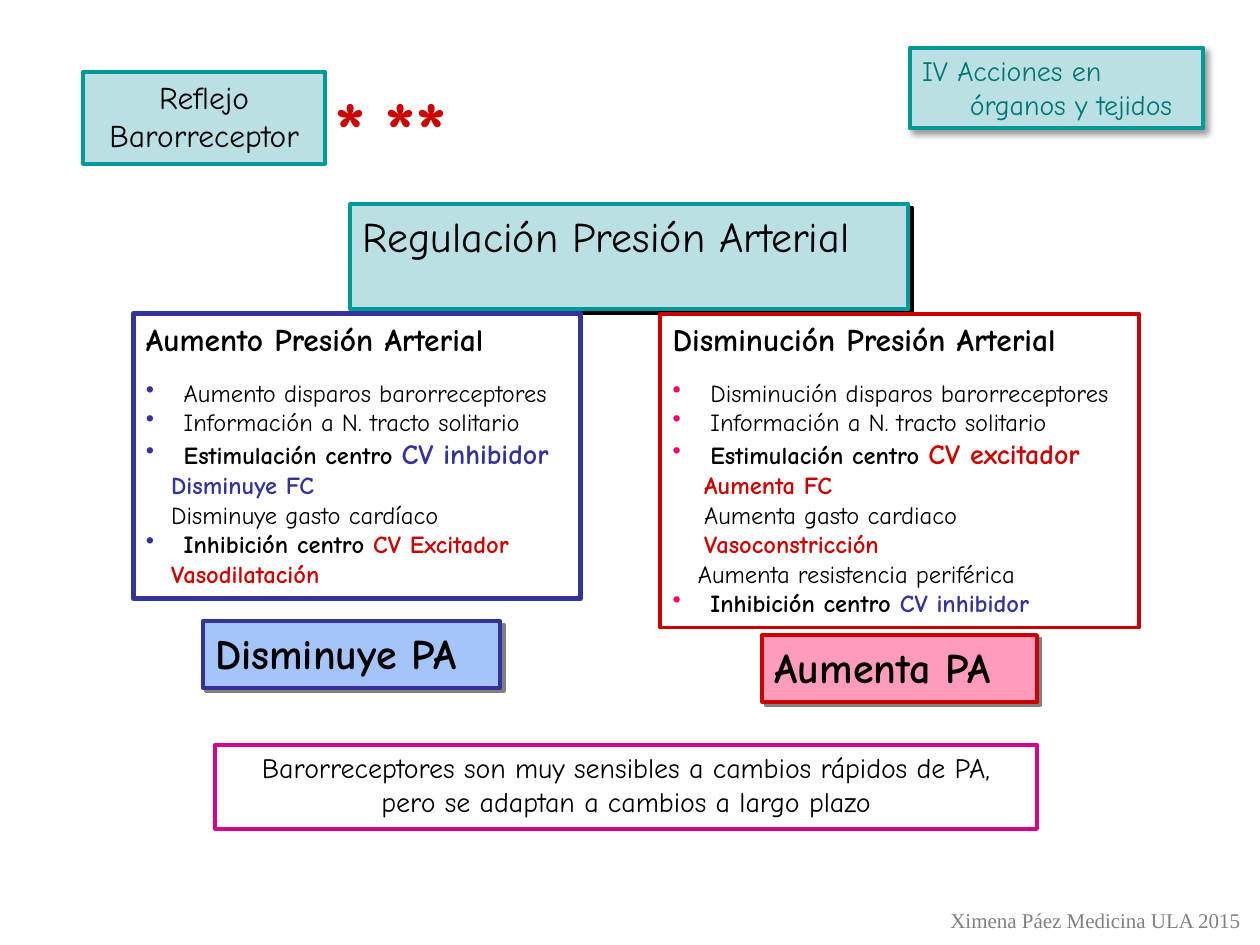
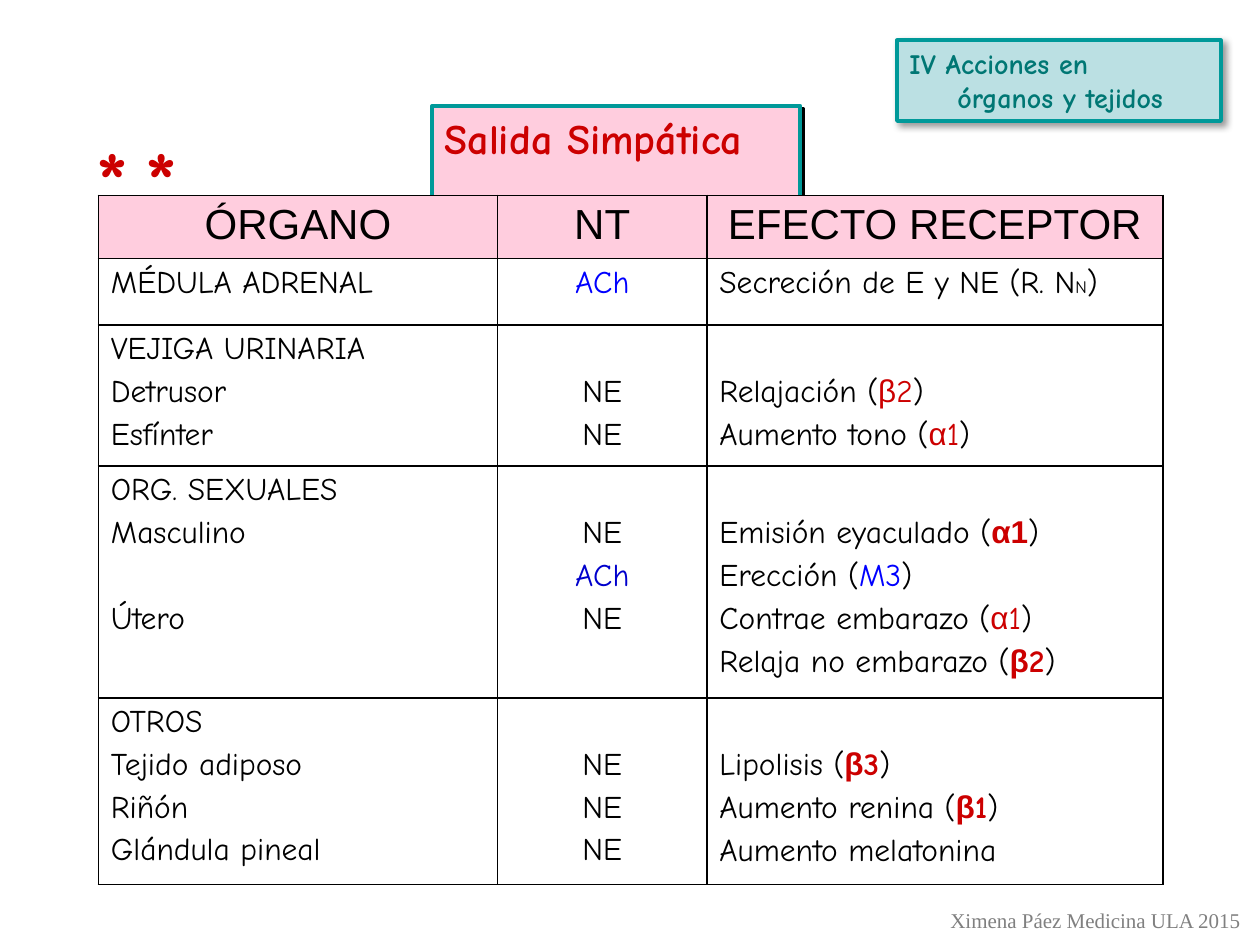
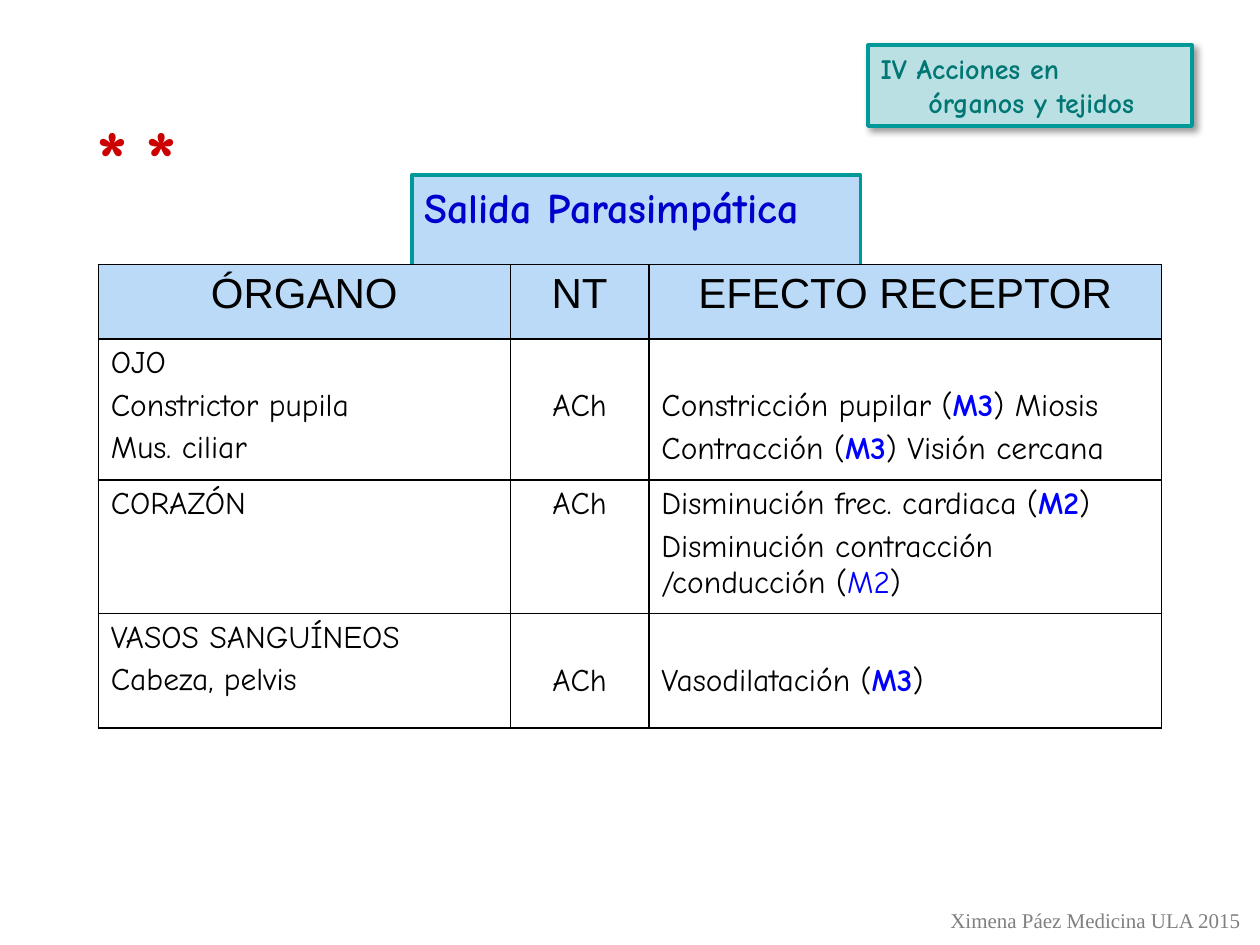
from dataclasses import dataclass

from lxml import etree
from pptx import Presentation
from pptx.dml.color import RGBColor
from pptx.enum.shapes import MSO_SHAPE as SHAPE
from pptx.enum.text import MSO_ANCHOR as ANCHOR, MSO_AUTO_SIZE as AUTO, PP_ALIGN as ALIGN
from pptx.oxml import parse_xml
from pptx.oxml.ns import nsdecls, qn
from pptx.util import Inches, Pt


@dataclass(frozen=True)
class Theme:
    font: str = "Comic Neue"
    symbol_font: str = "Arial"
    footer_font: str = "Times New Roman"
    black: str = "000000"
    white: str = "FFFFFF"
    gray: str = "808080"
    teal: str = "009999"
    teal_text: str = "007774"
    teal_fill: str = "BBE0E3"
    red: str = "CC0000"
    pink_fill: str = "FFCDDE"
    rose_fill: str = "FF9BBC"
    pink: str = "FF0066"
    magenta: str = "D60093"
    indigo: str = "333399"
    blue: str = "0000FF"
    deep_blue: str = "0000CC"
    sky_fill: str = "BBDAF7"
    blue_fill: str = "A5C5F9"
    star: int = 48
    title: int = 24
    body: int = 18
    note: int = 16
    item: int = 14
    footer: int = 12
    subscript: int = 10


T = Theme()


@dataclass
class Run:
    """Text whose unset properties come from its box."""
    text: str
    color: str = None
    bold: bool = None
    size: int = None
    font: str = None


@dataclass
class Para:
    runs: list
    bullet: str = None
    indent: float = 0
    before: float = 0


HARD_SHADOW = (100, 0, 2.8)
SOFT_SHADOW = (40, 4, 3)
LINE_PITCH = 0.34
CELL_GAP = 3.6


def shadow_xml(color, alpha, blur, dist):
    return parse_xml(
        f'<a:effectLst {nsdecls("a")}><a:outerShdw blurRad="{Pt(blur)}" dist="{Pt(dist)}" '
        f'dir="2700000" algn="ctr" rotWithShape="0"><a:srgbClr val="{color}">'
        f'<a:alpha val="{alpha * 1000}"/></a:srgbClr></a:outerShdw></a:effectLst>')


def as_para(value):
    if isinstance(value, Para):
        return value
    return Para(value if isinstance(value, list) else [Run(value)])


def item(text, bullet, before=0):
    return Para([Run(text)], bullet, 0.3, before)


def detail(text, color=None, indent=0.2):
    return Para([Run(text, color, bool(color))], indent=indent)


def center_item(action, name, color, bullet, size=None):
    """Bulleted line that names a cardiovascular centre."""
    runs = [Run(action + " centro ", bold=True), Run(name, color, True, size)]
    return Para(runs, bullet, 0.3)


def receptor(effect, name, bold=False, tail=")", symbols=1):
    """Effect followed by its receptor; Greek letters use the symbol font."""
    if name[0] == "M":
        marks = [Run(name, T.blue, bold)]
    else:
        marks = [Run(name[:symbols], T.red, bold, font=T.symbol_font)]
        if name[symbols:]:
            marks.append(Run(name[symbols:], T.red, bold))
    return [Run(effect + " ("), *marks, Run(tail)]


class Deck:
    def __init__(self, theme):
        self.theme = theme
        self.prs = Presentation()
        self.prs.slide_width, self.prs.slide_height = Inches(10), Inches(7.5)
        self.slide = None

    def new_slide(self):
        self.slide = self.prs.slides.add_slide(self.prs.slide_layouts[5])

    def set_paras(self, tf, paras, color=None, size=None, bold=False, font=None,
                  align=ALIGN.LEFT, gap=0):
        t = self.theme
        for i, para in enumerate(map(as_para, paras)):
            p = tf.paragraphs[0] if i == 0 else tf.add_paragraph()
            p.alignment = align
            p.space_before = Pt(para.before + gap if i else 0)
            self.indent(p, para)
            for run in para.runs:
                r = p.add_run()
                r.text = run.text
                f = r.font
                f.name = run.font or font or t.font
                f.size = Pt(run.size or size or t.body)
                f.bold = bold if run.bold is None else run.bold
                f.color.rgb = RGBColor.from_string(run.color or color or t.black)

    def indent(self, p, para):
        if not para.indent:
            return
        pPr = p._p.get_or_add_pPr()
        pPr.set("marL", str(Inches(para.indent)))
        if para.bullet:
            pPr.set("indent", str(-Inches(para.indent)))
            bu_color = etree.SubElement(pPr, qn("a:buClr"))
            etree.SubElement(bu_color, qn("a:srgbClr"), val=para.bullet)
            etree.SubElement(pPr, qn("a:buChar"), char="•")

    def frame(self, sp, paras, **style):
        tf = sp.text_frame
        tf.word_wrap = False
        tf.auto_size = AUTO.SHAPE_TO_FIT_TEXT
        tf.vertical_anchor = ANCHOR.TOP
        tf.margin_left = tf.margin_right = Inches(0.1)
        tf.margin_top = tf.margin_bottom = Inches(0.05)
        self.set_paras(tf, paras, **style)

    def paint(self, sp, fill, line, width=2.25, shadow=None, shadow_color=None):
        if fill:
            sp.fill.solid()
            sp.fill.fore_color.rgb = RGBColor.from_string(fill)
        else:
            sp.fill.background()
        sp.line.color.rgb = RGBColor.from_string(line)
        sp.line.width = Pt(width)
        if shadow:
            sp._element.spPr.append(shadow_xml(shadow_color or self.theme.black, *shadow))

    def box(self, at, paras, line, fill=None, width=2.25, shadow=None,
            shadow_color=None, **style):
        sp = self.slide.shapes.add_shape(SHAPE.RECTANGLE, *map(Inches, at))
        if not shadow:
            sp.shadow.inherit = False
        self.paint(sp, fill, line, width, shadow, shadow_color)
        self.frame(sp, paras, **style)

    def title(self, at, text, fill, color=None, bold=True, shadow=None):
        sp = self.slide.shapes.title
        sp.left, sp.top, sp.width, sp.height = map(Inches, at)
        self.paint(sp, fill, self.theme.teal, shadow=shadow)
        self.frame(sp, [text], color=color, size=self.theme.title, bold=bold)

    def text(self, at, text, **style):
        sp = self.slide.shapes.add_textbox(*map(Inches, at))
        self.frame(sp, [text], **style)
        return sp

    def stars(self, left, top, text="*", width=0.55):
        sp = self.text((left, top, width, 0.9), text, color=self.theme.red,
                       size=self.theme.star, bold=True)
        rPr = sp.text_frame.paragraphs[0].runs[0]._r.get_or_add_rPr()
        rPr.find(qn("a:solidFill")).addnext(shadow_xml(self.theme.black, *HARD_SHADOW))

    def section_tag(self, left, top, width, bold=True):
        t = self.theme
        self.box((left, top, width, 0.64),
                 ["IV Acciones en", Para([Run("órganos y tejidos")], indent=0.38)],
                 t.teal, t.teal_fill, shadow=SOFT_SHADOW,
                 color=t.teal_text, size=t.note, bold=bold)

    def footer(self):
        t = self.theme
        self.text((7.43, 7.15, 2.53, 0.3), "Ximena Páez Medicina ULA 2015", color=t.gray,
                  size=t.footer, font=t.footer_font, align=ALIGN.CENTER)

    def cell(self, cell, paras, fill, skip=0, **style):
        """Fill a cell, starting its text skip lines below the top."""
        tcPr = cell._tc.get_or_add_tcPr()
        for side in "LRTB":
            tcPr.append(parse_xml(
                f'<a:ln{side} {nsdecls("a")} w="{Pt(1)}"><a:solidFill>'
                f'<a:srgbClr val="{self.theme.black}"/></a:solidFill></a:ln{side}>'))
        cell.fill.solid()
        cell.fill.fore_color.rgb = RGBColor.from_string(fill)
        cell.margin_left = cell.margin_right = Inches(0.1)
        cell.margin_top = Inches(0.05 + skip * LINE_PITCH)
        cell.margin_bottom = Inches(0.05)
        self.set_paras(cell.text_frame, paras, gap=CELL_GAP, **style)

    def effects_table(self, top, widths, heights, head_fill, rows):
        """Each row holds the lines to skip beside the organ, then three cells."""
        t = self.theme
        shape = self.slide.shapes.add_table(len(heights), len(widths), Inches(0.78), Inches(top),
                                            Inches(sum(widths)), Inches(sum(heights)))
        table = shape.table
        for column, width in zip(table.columns, widths):
            column.width = Inches(width)
        for row, height in zip(table.rows, heights):
            row.height = Inches(height)
        for c, head in enumerate(("ÓRGANO", "NT", "EFECTO RECEPTOR")):
            self.cell(table.cell(0, c), [head], head_fill, size=t.title,
                      font=t.symbol_font, align=ALIGN.CENTER)
        for r, (skip, *cells) in enumerate(rows, 1):
            for c, paras in enumerate(cells):
                self.cell(table.cell(r, c), paras, t.white, skip if c else 0,
                          align=ALIGN.CENTER if c == 1 else ALIGN.LEFT)


def baroreflex_slide(deck):
    deck.new_slide()
    deck.title((2.78, 1.62, 4.43, 0.53), "Regulación Presión Arterial", T.teal_fill,
               bold=False, shadow=HARD_SHADOW)
    deck.box((0.66, 0.57, 1.92, 0.73), ["Reflejo", "Barorreceptor"], T.teal, T.teal_fill,
             align=ALIGN.CENTER)
    deck.box((1.06, 2.49, 3.55, 2.26), [
        [Run("Aumento Presión Arterial", bold=True, size=T.body)],
        item("Aumento disparos barorreceptores", T.indigo, before=11.5),
        item("Información a N. tracto solitario", T.indigo),
        center_item("Estimulación", "CV inhibidor", T.indigo, T.indigo, T.note),
        detail("Disminuye FC", T.indigo),
        detail("Disminuye gasto cardíaco"),
        center_item("Inhibición", "CV Excitador", T.red, T.indigo),
        detail("Vasodilatación", T.red),
    ], T.indigo, width=3, size=T.item)
    deck.box((5.24, 2.49, 3.8, 2.49), [
        [Run("Disminución Presión Arterial", bold=True, size=T.body)],
        item("Disminución disparos barorreceptores", T.pink, before=11.5),
        item("Información a N. tracto solitario", T.pink),
        center_item("Estimulación", "CV excitador", T.red, T.pink, T.note),
        detail("Aumenta FC", T.red, 0.25),
        detail("Aumenta gasto cardiaco", indent=0.25),
        detail("Vasoconstricción", T.red, 0.25),
        detail("Aumenta resistencia periférica"),
        center_item("Inhibición", "CV inhibidor", T.indigo, T.pink),
    ], T.red, size=T.item)
    deck.box((1.71, 5.91, 6.52, 0.67),
             ["Barorreceptores son muy sensibles a cambios rápidos de PA,",
              "pero se adaptan a cambios a largo plazo"],
             T.magenta, size=T.note, align=ALIGN.CENTER)
    deck.stars(2.95, 0.57, "**", 0.91)
    deck.stars(2.56, 0.57)
    for at, text, line, fill in (
            ((1.61, 4.93, 2.36, 0.53), "Disminuye PA", T.indigo, T.blue_fill),
            ((6.05, 5.04, 2.18, 0.53), "Aumenta PA", T.red, T.rose_fill)):
        deck.box(at, [text], line, fill, shadow=HARD_SHADOW, shadow_color=T.gray,
                 size=T.title, bold=True)
    deck.section_tag(7.22, 0.38, 2.33, bold=False)
    deck.footer()


def sympathetic_slide(deck):
    deck.new_slide()
    deck.title((3.43, 0.84, 2.92, 0.53), "Salida Simpática", T.pink_fill, T.red,
               shadow=HARD_SHADOW)
    deck.effects_table(1.55, (3.17, 1.66, 3.62), (0.5, 0.53, 1.12, 1.84, 1.48), T.pink_fill, [
        (0, ["MÉDULA ADRENAL"], [[Run("ACh", T.blue)]],
         [[Run("Secreción de E y NE (R. N"), Run("N", size=T.subscript), Run(")")]]),
        (1, ["VEJIGA URINARIA", "Detrusor", "Esfínter"], ["NE", "NE"],
         [receptor("Relajación", "β2"), receptor("Aumento tono", "α1")]),
        (1, ["ORG. SEXUALES", "Masculino",
             Para([Run("Útero")], before=LINE_PITCH * 72)],
         ["NE", [Run("ACh", T.deep_blue)], "NE"],
         [receptor("Emisión eyaculado", "α1", True, symbols=2),
          receptor("Erección", "M3"),
          receptor("Contrae embarazo", "α1"),
          receptor("Relaja no embarazo", "β2", True)]),
        (1, ["OTROS", "Tejido adiposo", "Riñón", "Glándula pineal"], ["NE"] * 3,
         [receptor("Lipolisis", "β3", True), receptor("Aumento renina", "β1", True),
          "Aumento melatonina"]),
    ])
    for left in (0.67, 1.06):
        deck.stars(left, 0.96)
    deck.section_tag(7.12, 0.32, 2.57)
    deck.footer()


def parasympathetic_slide(deck):
    deck.new_slide()
    deck.title((3.27, 1.39, 3.56, 0.53), "Salida Parasimpática", T.sky_fill, T.deep_blue)
    deck.effects_table(2.1, (3.27, 1.1, 4.07), (0.59, 1.12, 1.06, 0.91), T.sky_fill, [
        (1, ["OJO", "Constrictor pupila", "Mus. ciliar"], ["ACh"],
         [receptor("Constricción pupilar", "M3", True, ") Miosis"),
          receptor("Contracción", "M3", True, ") Visión cercana")]),
        (0, ["CORAZÓN"], ["ACh"],
         [receptor("Disminución frec. cardiaca", "M2", True),
          receptor("Disminución contracción /conducción", "M2")]),
        (1, ["VASOS SANGUÍNEOS", "Cabeza, pelvis"], ["ACh"],
         [receptor("Vasodilatación", "M3", True)]),
    ])
    for left in (0.67, 1.06):
        deck.stars(left, 0.8)
    deck.section_tag(6.89, 0.36, 2.57)
    deck.footer()


def main():
    deck = Deck(T)
    baroreflex_slide(deck)
    sympathetic_slide(deck)
    parasympathetic_slide(deck)
    deck.prs.save("out.pptx")


if __name__ == "__main__":
    main()
